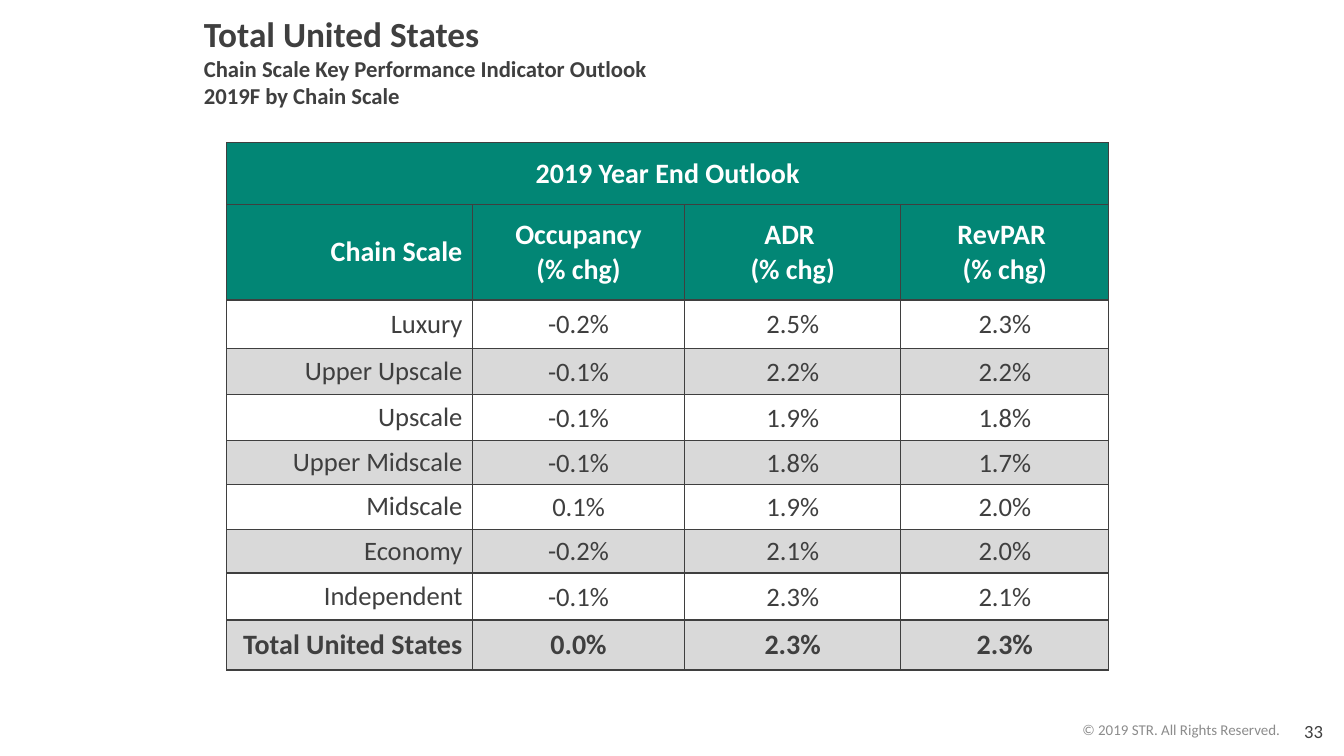
from dataclasses import dataclass

from lxml import etree
from pptx import Presentation
from pptx.dml.color import RGBColor
from pptx.enum.text import MSO_ANCHOR, PP_ALIGN
from pptx.oxml.ns import qn
from pptx.util import Pt

LEFT, MID, RIGHT = PP_ALIGN.LEFT, PP_ALIGN.CENTER, PP_ALIGN.RIGHT
TOP, CENTRE = MSO_ANCHOR.TOP, MSO_ANCHOR.MIDDLE


@dataclass(frozen=True)
class Theme:
    font: str = "Calibri"
    ink: str = "3F3F3F"
    pale: str = "8C8C8C"
    white: str = "FFFFFF"
    green: str = "028675"
    band: str = "D9D9D9"
    title: float = 25.2
    sub: float = 16.2
    head: float = 20
    body: float = 19
    page: float = 13.3
    note: float = 10.7
    rule: float = 1


THEME = Theme()

COLS = [175.5, 151.5, 154.5, 148.5]
ROWS = [44.3, 68, 34.6, 33, 33, 31.4, 31.8, 31.4, 33.5, 35.8]
HEADS = [["Chain Scale"], ["Occupancy", "(% chg)"],
         ["ADR ", "(% chg)"], ["RevPAR ", "(% chg)"]]
DATA = [
    ("Luxury", "-0.2%", "2.5%", "2.3%"),
    ("Upper Upscale", "-0.1%", "2.2%", "2.2%"),
    ("Upscale", "-0.1%", "1.9%", "1.8%"),
    ("Upper Midscale", "-0.1%", "1.8%", "1.7%"),
    ("Midscale", "0.1%", "1.9%", "2.0%"),
    ("Economy", "-0.2%", "2.1%", "2.0%"),
    ("Independent", "-0.1%", "2.3%", "2.1%"),
    ("Total United States", "0.0%", "2.3%", "2.3%"),
]


def write(frame, lines, align):
    """Fill a frame; each line is (text, size, colour, bold)."""
    for i, (text, size, color, bold) in enumerate(lines):
        para = frame.add_paragraph() if i else frame.paragraphs[0]
        para.alignment = align
        run = para.add_run()
        run.text = text
        font = run.font
        font.name, font.size, font.bold = THEME.font, Pt(size), bold
        font.color.rgb = RGBColor.from_string(color)


def add_text(slide, box, lines, align=LEFT, anchor=TOP, pad=3.6):
    frame = slide.shapes.add_textbox(*map(Pt, box)).text_frame
    frame.word_wrap = True
    frame.vertical_anchor = anchor
    frame.margin_top = frame.margin_bottom = Pt(pad)
    write(frame, lines, align)


def add_rules(cell):
    """Draw all four borders, placed ahead of the cell fill."""
    props = cell._tc.get_or_add_tcPr()
    for i, side in enumerate(("a:lnL", "a:lnR", "a:lnT", "a:lnB")):
        line = etree.Element(qn(side), w=str(Pt(THEME.rule)))
        fill = etree.SubElement(line, qn("a:solidFill"))
        etree.SubElement(fill, qn("a:srgbClr"), val=THEME.ink)
        props.insert(i, line)


def set_cell(cell, lines, align, fill=None, pad=None):
    cell.vertical_anchor = CENTRE
    if pad is not None:
        cell.margin_left = cell.margin_right = Pt(pad)
        cell.margin_top, cell.margin_bottom = Pt(pad), 0
    write(cell.text_frame, lines, align)
    if fill:
        cell.fill.solid()
        cell.fill.fore_color.rgb = RGBColor.from_string(fill)
    else:
        cell.fill.background()
    add_rules(cell)


def add_grid(slide, left, top):
    size = map(Pt, (left, top, sum(COLS), sum(ROWS)))
    table = slide.shapes.add_table(len(ROWS), len(COLS), *size).table
    table.first_row = table.horz_banding = False
    for col, width in zip(table.columns, COLS):
        col.width = Pt(width)
    for row, height in zip(table.rows, ROWS):
        row.height = Pt(height)

    # Heading rows
    banner = table.cell(0, 0)
    banner.merge(table.cell(0, len(COLS) - 1))
    set_cell(banner, [("2019 Year End Outlook", THEME.head, THEME.white, True)],
             MID, THEME.green)
    for c in range(1, len(COLS)):
        add_rules(table.cell(0, c))
    for c, words in enumerate(HEADS):
        lines = [(word, THEME.head, THEME.white, True) for word in words]
        set_cell(table.cell(1, c), lines, MID if c else RIGHT, THEME.green)

    # Data rows, every second one shaded, the last one bold
    for r, row in enumerate(DATA):
        total = r == len(DATA) - 1
        size = THEME.head if total else THEME.body
        for c, text in enumerate(row):
            set_cell(table.cell(r + 2, c), [(text, size, THEME.ink, total)],
                     MID if c else RIGHT, THEME.band if r % 2 else None,
                     (0 if total else 0.72) if c else None)


def main():
    deck = Presentation()
    deck.slide_width, deck.slide_height = Pt(960), Pt(540)
    slide = deck.slides.add_slide(deck.slide_layouts[6])

    # Title
    add_text(slide, (138.5, 9, 666, 71), [
        ("Total United States", THEME.title, THEME.ink, True),
        ("Chain Scale Key Performance Indicator Outlook", THEME.sub, THEME.ink, True),
        ("2019F by Chain Scale", THEME.sub, THEME.ink, True),
    ], pad=0)

    # Outlook table
    add_grid(slide, 162, 102)

    # Footer
    add_text(slide, (672, 511, 252, 20), [
        ("© 2019 STR. All Rights Reserved. ", THEME.note, THEME.pale, False),
    ], RIGHT)
    add_text(slide, (924.5, 511, 41, 24), [("33", THEME.page, THEME.ink, False)])

    deck.save("out.pptx")


if __name__ == "__main__":
    main()
